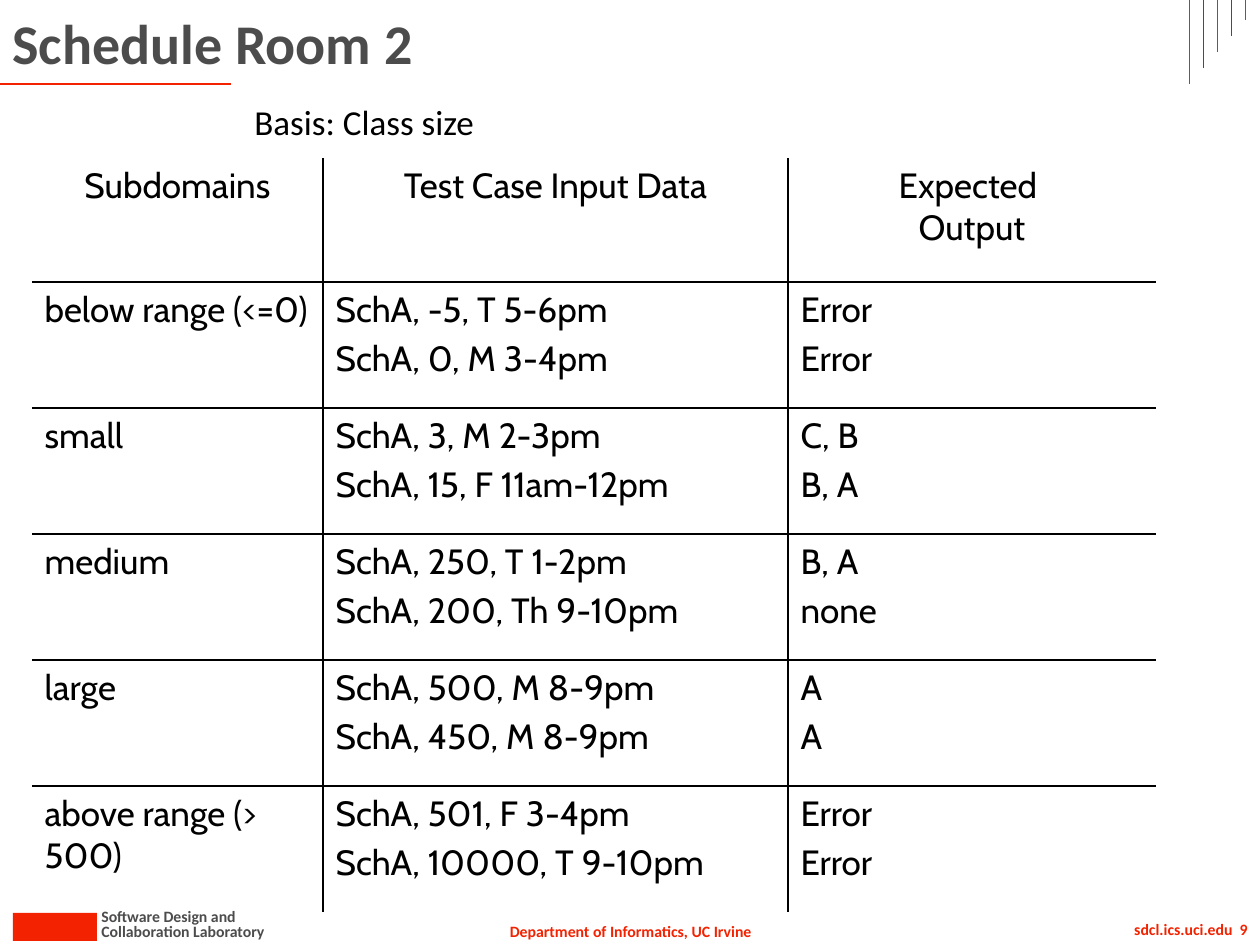
from lxml import etree
from pptx import Presentation
from pptx.dml.color import RGBColor
from pptx.enum.shapes import MSO_CONNECTOR, MSO_SHAPE
from pptx.enum.text import MSO_ANCHOR, PP_ALIGN
from pptx.oxml.ns import qn
from pptx.util import Emu, Pt

LEFT, CENTER, RIGHT = PP_ALIGN.LEFT, PP_ALIGN.CENTER, PP_ALIGN.RIGHT
TOP, MIDDLE = MSO_ANCHOR.TOP, MSO_ANCHOR.MIDDLE
STRAIGHT = MSO_CONNECTOR.STRAIGHT
RECTANGLE = MSO_SHAPE.RECTANGLE
RED = RGBColor(0xF3, 0x22, 0x00)
GRAY = RGBColor(0x4C, 0x4C, 0x4C)
BLACK = RGBColor(0, 0, 0)
PX = 914400 / 126


def px(*values):
    return [Emu(round(v * PX)) for v in values]


def write(p, text, size, font, color, bold=False, align=LEFT):
    p.text = text
    p.alignment = align
    for r in p.runs:
        for name, value in {"size": Pt(size), "name": font, "bold": bold}.items():
            setattr(r.font, name, value)
        r.font.color.rgb = color


prs = Presentation()
prs.slide_width, prs.slide_height = px(1260, 945)
s = prs.slides.add_slide(prs.slide_layouts[6])

block = s.shapes.add_shape(RECTANGLE, *px(13, 913, 84, 28))
block.shadow.inherit = False
block.fill.solid()
block.fill.fore_color.rgb = RED
block.line.fill.background()

texts = [
    ("Department of Informatics, UC Irvine", (495, 916, 271, 32), 9, RED, True, CENTER, False, TOP),
    ("Collaboration Laboratory", (89, 916, 193, 32), 9, GRAY, True, LEFT, False, TOP),
    ("Software Design and", (89, 901, 163, 32), 9, GRAY, True, LEFT, False, TOP),
    ("sdcl.ics.uci.edu\u00a0 9", (988, 914, 272, 32), 9, RED, True, RIGHT, True, TOP),
    ("Schedule Room 2", (0, 0, 1134, 84), 32, GRAY, True, LEFT, True, MIDDLE),
    ("Basis: Class size", (242, 94, 248, 55), 20, BLACK, False, LEFT, False, TOP),
]
for text, box, size, color, bold, align, wrap, anchor in texts:
    tf = s.shapes.add_textbox(*px(*box)).text_frame
    tf.word_wrap = wrap
    tf.vertical_anchor = anchor
    write(tf.paragraphs[0], text, size, "Calibri", color, bold, align)

lines = [((0, 84, 231, 84), RED, 1.5)]
for i in range(5):
    x = 1189 + 14 * i
    lines.append(((x, 84 - 16 * i, x, 0), GRAY if i % 2 else RED, 0.5))
for ends, color, width in lines:
    c = s.shapes.add_connector(STRAIGHT, *px(*ends))
    c.line.color.rgb = color
    c.line.width = Pt(width)
    etree.SubElement(c._element.spPr, qn("a:effectLst"))

rows = [
    ("Subdomains", ["Test Case Input Data"], ["Expected \nOutput"]),
    ("below range (<=0)", ["SchA, -5, T 5-6pm", "SchA, 0, M 3-4pm"], ["Error", "Error"]),
    ("small", ["SchA, 3, M 2-3pm", "SchA, 15, F 11am-12pm"], ["C, B", "B, A"]),
    ("medium", ["SchA, 250, T 1-2pm", "SchA, 200, Th 9-10pm"], ["B, A", "none"]),
    ("large", ["SchA, 500, M 8-9pm", "SchA, 450, M 8-9pm"], ["A", "A"]),
    ("above range (> 500)", ["SchA, 501, F 3-4pm", "SchA, 10000, T 9-10pm"], ["Error", "Error"]),
]
widths = [291, 465, 368]
heights = [124] + [126] * 5
frame = s.shapes.add_table(6, 3, *px(32, 158, sum(widths), sum(heights)))
table = frame.table
table.first_row = table.horz_banding = False
for column, width in zip(table.columns, px(*widths)):
    column.width = width
for row, height in zip(table.rows, px(*heights)):
    row.height = height

for i, (subdomain, inputs, outputs) in enumerate(rows):
    for j, items in enumerate([[subdomain], inputs, outputs]):
        cell = table.cell(i, j)
        tf = cell.text_frame
        for n, item in enumerate(items):
            p = tf.add_paragraph() if n else tf.paragraphs[0]
            write(p, item, 20, "Cabin", BLACK, align=LEFT if i else CENTER)
            p.space_before = Pt(4)
        tcPr = cell._tc.get_or_add_tcPr()
        inner = {"lnL": j > 0, "lnR": j < 2, "lnT": i > 0, "lnB": i < 5}
        for tag, visible in inner.items():
            ln = etree.SubElement(tcPr, qn("a:" + tag), w=str(Pt(1)))
            if visible:
                fill = etree.SubElement(ln, qn("a:solidFill"))
                etree.SubElement(fill, qn("a:srgbClr"), val=str(BLACK))
            else:
                etree.SubElement(ln, qn("a:noFill"))
        cell.fill.background()

prs.save("out.pptx")
